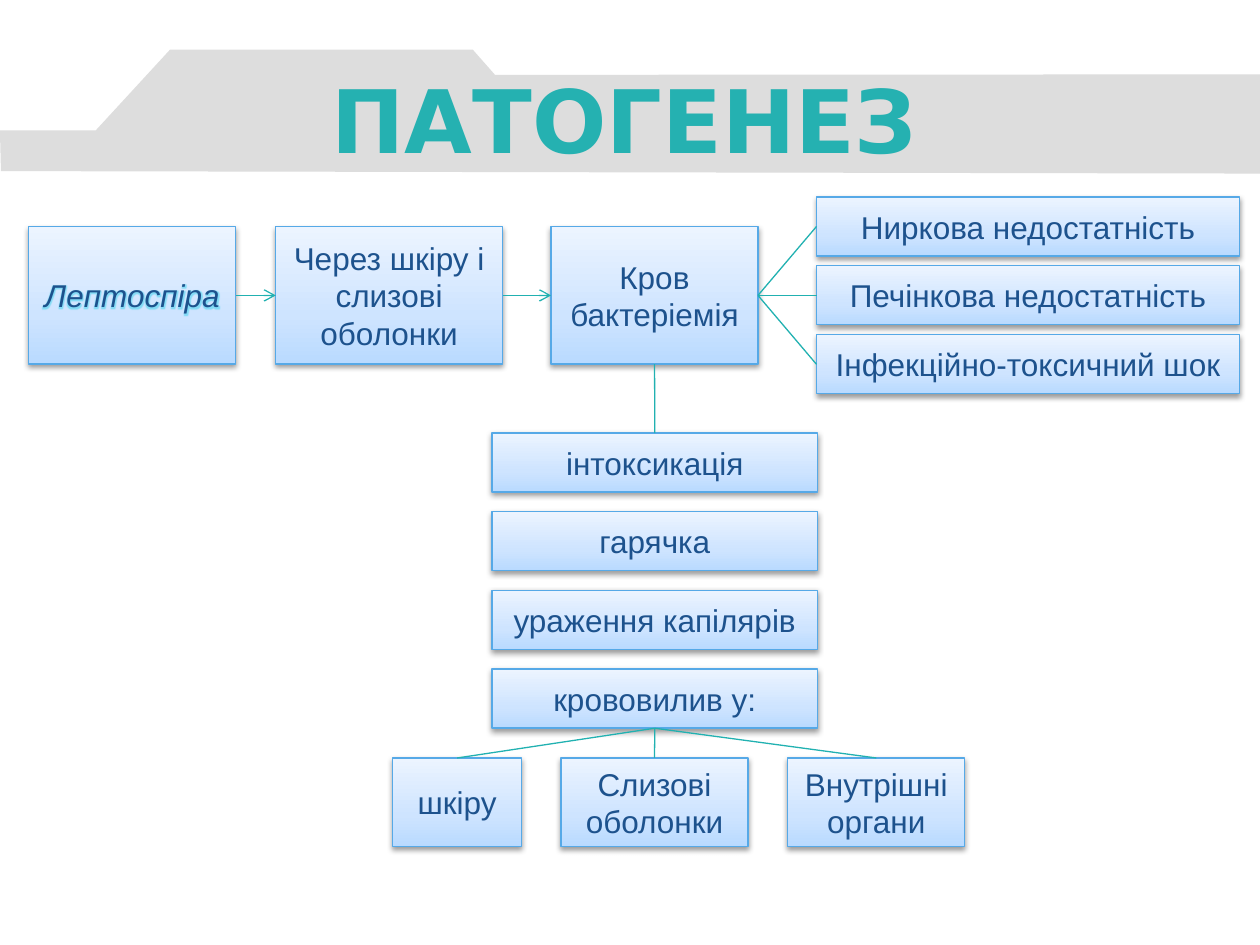
from copy import deepcopy

from lxml.etree import SubElement
from pptx import Presentation
from pptx.dml.color import RGBColor
from pptx.enum.shapes import MSO_CONNECTOR as Link, MSO_SHAPE as Shape
from pptx.enum.text import MSO_ANCHOR as Anchor, MSO_AUTO_SIZE as AutoSize, PP_ALIGN as Align
from pptx.oxml import parse_xml
from pptx.oxml.ns import nsdecls, qn
from pptx.util import Cm, Pt

TOP, LEFT, BOTTOM, RIGHT = range(4)
BAR_HEIGHT = 1.19
GRADIENT = [(0, "B9DAFF"), (0.35, "CEE4FF"), (1, "ECF4FF")]
BODY_FONT = {"name": "Arial", "size": Pt(18)}
TITLE_FONT = {"name": "DejaVu Sans", "size": Pt(50), "bold": True}
SHADOW = f"""<a:effectLst {nsdecls("a")}>
  <a:outerShdw blurRad="40000" dist="20000" dir="5400000" rotWithShape="0">
    <a:srgbClr val="000000"><a:alpha val="38000"/></a:srgbClr>
  </a:outerShdw></a:effectLst>"""
GLOW = f"""<a:effectLst {nsdecls("a")}>
  <a:glow rad="50000"><a:srgbClr val="4FD5F0"><a:alpha val="60000"/></a:srgbClr></a:glow>
  </a:effectLst>"""


def color(value):
    """Turn a hex string into a colour."""
    return RGBColor.from_string(value)


def set_values(target, values):
    """Set every attribute named in a dict of format values."""
    for name, value in values.items():
        setattr(target, name, value)


def write(frame, text, font, ink):
    """Write centred paragraphs, one for each line of text."""
    set_values(frame, {"text": text, "word_wrap": True, "vertical_anchor": Anchor.MIDDLE})
    for para in frame.paragraphs:
        para.alignment = Align.CENTER
        for span in para.runs:
            set_values(span.font, font)
            span.font.color.rgb = color(ink)


def fill_gradient(card):
    """Fill a card with the vertical three-stop gradient."""
    card.fill.gradient()
    card.fill.gradient_angle = 90
    first = card._element.spPr.find(f".//{qn('a:gs')}")
    first.addnext(deepcopy(first))
    for stop, (position, value) in zip(card.fill.gradient_stops, GRADIENT):
        stop.position = position
        stop.color.rgb = color(value)


def add_card(page, box, text):
    """Add one shaded rectangle with centred text."""
    card = page.shapes.add_shape(Shape.RECTANGLE, *map(Cm, box))
    fill_gradient(card)
    card.line.color.rgb = color("56A9E7")
    card.line.width = Pt(0.75)
    card._element.spPr.append(parse_xml(SHADOW))
    write(card.text_frame, text, BODY_FONT, "1D528D")
    return card


def join(page, start, start_side, end, end_side, arrow=False):
    """Join the sides of two cards with a straight line."""
    link = page.shapes.add_connector(Link.STRAIGHT, 0, 0, 0, 0)
    link.begin_connect(start, start_side)
    link.end_connect(end, end_side)
    link.line.color.rgb = color("21B1B1")
    link.line.width = Pt(0.75)
    if arrow:
        SubElement(link.line._get_or_add_ln(), qn("a:tailEnd"), type="arrow")
    SubElement(link._element.spPr, qn("a:effectLst"))


def add_banner(page, box):
    """Draw the grey tab-shaped band behind the title."""
    left, top, width, height = box
    outline = [(0, 1.63), (1.93, 1.63), (3.43, 0), (9.53, 0), (9.98, 0.51),
               (width - 0.02, 0.5), (width, height), (0.02, height - 0.05)]
    points = [(Cm(left + x), Cm(top + y)) for x, y in outline]
    builder = page.shapes.build_freeform(*points[0])
    builder.add_line_segments(points[1:], close=True)
    banner = builder.convert_to_shape()
    banner.shadow.inherit = False
    banner.fill.solid()
    banner.fill.fore_color.rgb = color("DDDDDD")
    banner.line.fill.background()
    page.shapes._spTree.insert(2, banner._element)


def add_title(page, box, text):
    """Place and format the title placeholder."""
    title = page.shapes.title
    set_values(title, dict(zip(("left", "top", "width", "height"), map(Cm, box))))
    write(title.text_frame, text, TITLE_FONT, "25B1B1")
    title.text_frame.auto_size = AutoSize.NONE


def add_route(page, box):
    """Add the chain from the pathogen to the blood and return its last card."""
    left, top, width, height = box
    steps = [(0, 4.17, "Лептоспіра"),
             (4.98, 4.57, "Через шкіру і слизові оболонки"),
             (width - 4.17, 4.17, "Кров\nбактеріемія")]
    cards = [add_card(page, (left + x, top, size, height), text) for x, size, text in steps]
    for start, end in zip(cards, cards[1:]):
        join(page, start, RIGHT, end, LEFT, arrow=True)
    pathogen = cards[0].text_frame.paragraphs[0].runs[0]
    pathogen.font.italic = True
    pathogen._r.rPr.find(qn("a:solidFill")).addnext(parse_xml(GLOW))
    return cards[-1]


def add_stack(page, box, texts):
    """Spread equal bars evenly over the height of the box."""
    left, top, width, height = box
    pitch = (height - BAR_HEIGHT) / (len(texts) - 1)
    return [add_card(page, (left, top + i * pitch, width, BAR_HEIGHT), text)
            for i, text in enumerate(texts)]


def add_sites(page, box, source):
    """Add the row of bleeding sites below their source card."""
    left, top, width, height = box
    sites = [(2.59, "шкіру"), (3.77, "Слизові оболонки"), (3.57, "Внутрішні органи")]
    gap = (width - sum(size for size, _ in sites)) / (len(sites) - 1)
    for size, text in sites:
        join(page, source, BOTTOM, add_card(page, (left, top, size, height), text), TOP)
        left += size + gap


def main():
    """Build and save the deck."""
    deck = Presentation()
    set_values(deck, {"slide_width": Cm(25.4), "slide_height": Cm(19.05)})
    page = deck.slides.add_slide(deck.slide_layouts[5])
    add_banner(page, (0, 1, 25.42, 2.5))
    add_title(page, (1.7, 1.6, 21.79, 1.57), "ПАТОГЕНЕЗ")
    blood = add_route(page, (0.58, 4.57, 14.7, 2.77))
    outcomes = add_stack(page, (16.46, 3.97, 8.53, 3.97), [
        "Ниркова недостатність", "Печінкова недостатність", "Інфекційно-токсичний шок"])
    for outcome in outcomes:
        join(page, blood, RIGHT, outcome, LEFT)
    signs = add_stack(page, (9.92, 8.73, 6.56, 5.95), [
        "інтоксикація", "гарячка", "ураження капілярів", "крововилив у:"])
    join(page, blood, BOTTOM, signs[0], TOP)
    add_sites(page, (7.92, 15.28, 11.53, 1.79), signs[-1])
    deck.save("out.pptx")


if __name__ == "__main__":
    main()
